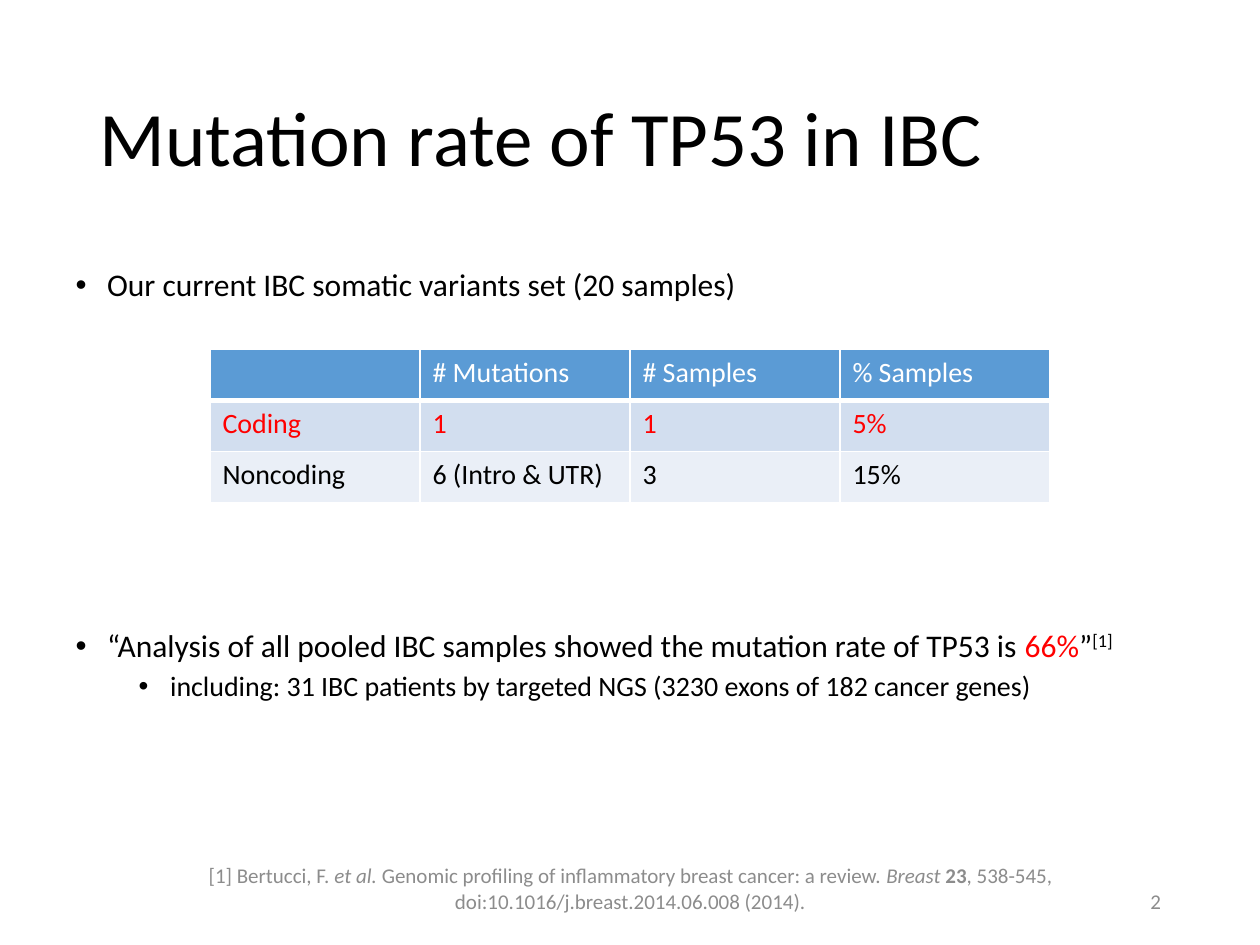
"""Build the slide on the mutation rate of TP53 in IBC."""
from lxml.etree import SubElement
from pptx import Presentation
from pptx.dml.color import RGBColor
from pptx.enum.text import MSO_ANCHOR as Anchor, MSO_AUTO_SIZE as AutoSize, PP_ALIGN as Align
from pptx.oxml.ns import qn
from pptx.util import Pt

BLACK, WHITE, RED, GRAY = "000000", "FFFFFF", "FF0000", "8C8C8C"


def rgb(color):
    """Turn a hex string into a colour."""
    return RGBColor.from_string(color)


def format_paragraph(paragraph, size, color, align=Align.LEFT):
    """Set the font and alignment of a paragraph."""
    paragraph.alignment = align
    paragraph.font.name = "Calibri"
    paragraph.font.size = Pt(size)
    paragraph.font.color.rgb = rgb(color)


presentation = Presentation()
presentation.slide_width, presentation.slide_height = Pt(720), Pt(540)
slide = presentation.slides.add_slide(presentation.slide_layouts[1])

title, body = slide.placeholders
title.left, title.top, title.width, title.height = Pt(49.5), Pt(28.75), Pt(621), Pt(104.4)
title.text_frame.text = "Mutation rate of TP53 in IBC"
title.text_frame.auto_size = AutoSize.NONE
title.text_frame.vertical_anchor = Anchor.MIDDLE
format_paragraph(title.text_frame.paragraphs[0], 44, BLACK)
title.text_frame.paragraphs[0].line_spacing = 0.9

body.left, body.top, body.width, body.height = Pt(36), Pt(150.5), Pt(648), Pt(293)
body.text_frame.auto_size = AutoSize.NONE
bullets = [
    (["Our current IBC somatic variants set (20 samples)"], 0, 18, 10),
    (["“Analysis of all pooled IBC samples showed the mutation rate of TP53 is ",
      "66%", "”", "[1]"], 0, 18, 186.5),
    (["including: 31 IBC patients by targeted NGS (3230 exons of 182 cancer genes)"], 1, 16, 5),
]
for index, (texts, level, size, space_before) in enumerate(bullets):
    paragraph = body.text_frame.add_paragraph() if index else body.text_frame.paragraphs[0]
    paragraph.level = level
    paragraph.line_spacing = 0.9
    paragraph.space_before = Pt(space_before)
    format_paragraph(paragraph, size, BLACK)
    properties = paragraph._p.get_or_add_pPr()
    properties.set("marL", str(Pt(18 + 36 * level)))
    properties.set("indent", str(Pt(-18)))
    bullet_font = SubElement(properties, qn("a:buFont"), typeface="Arial")
    bullet_font.addnext(SubElement(properties, qn("a:buChar"), char="•"))
    properties.append(properties.find(qn("a:defRPr")))
    for text in texts:
        run = paragraph.add_run()
        run.text = text
        if text == "66%":
            run.font.color.rgb = rgb(RED)
        elif text == "[1]":
            run._r.get_or_add_rPr().set("baseline", "30000")

rows = [
    (["", "# Mutations", "# Samples", "% Samples"], "5B9BD5", WHITE),
    (["Coding", "1", "1", "5%"], "D2DEEF", RED),
    (["Noncoding", "6 (Intro & UTR)", "3", "15%"], "EAEFF7", BLACK),
]
table = slide.shapes.add_table(3, 4, Pt(120), Pt(199.5), Pt(480), Pt(88)).table
for row_index, (texts, fill, color) in enumerate(rows):
    for column_index, text in enumerate(texts):
        cell = table.cell(row_index, column_index)
        cell.text = text
        format_paragraph(cell.text_frame.paragraphs[0], 16, color)
        cell.text_frame.paragraphs[0].font.bold = False
        for run in cell.text_frame.paragraphs[0].runs:
            run.font.bold = False
        cell_properties = cell._tc.get_or_add_tcPr()
        for side in "LRTB":
            width = 3 if row_index == 0 and side == "B" else 1
            border = SubElement(cell_properties, qn(f"a:ln{side}"), w=str(Pt(width)))
            SubElement(SubElement(border, qn("a:solidFill")), qn("a:srgbClr"), val=WHITE)
        cell.fill.solid()
        cell.fill.fore_color.rgb = rgb(fill)

page_number = slide.shapes.add_textbox(Pt(508.5), Pt(500.5), Pt(162), Pt(28.75))
page_number.text_frame.text = "2"
citation = slide.shapes.add_textbox(Pt(98.5), Pt(500.5), Pt(523.5), Pt(28.75))
citation.text_frame.margin_bottom = Pt(18.25)
for text, italic, bold in [
    ("[1] Bertucci, F.", False, False),
    (" et al.", True, False),
    (" Genomic profiling of inflammatory breast cancer: a review. ", False, False),
    ("Breast ", True, False),
    ("23", False, True),
    (", 538-545, doi:10.1016/j.breast.2014.06.008 (2014).", False, False),
]:
    run = citation.text_frame.paragraphs[0].add_run()
    run.text, run.font.italic, run.font.bold = text, italic, bold
for shape, align in [(page_number, Align.RIGHT), (citation, Align.CENTER)]:
    shape.text_frame.word_wrap = True
    shape.text_frame.vertical_anchor = Anchor.MIDDLE
    format_paragraph(shape.text_frame.paragraphs[0], 12, GRAY, align)

presentation.save("out.pptx")
